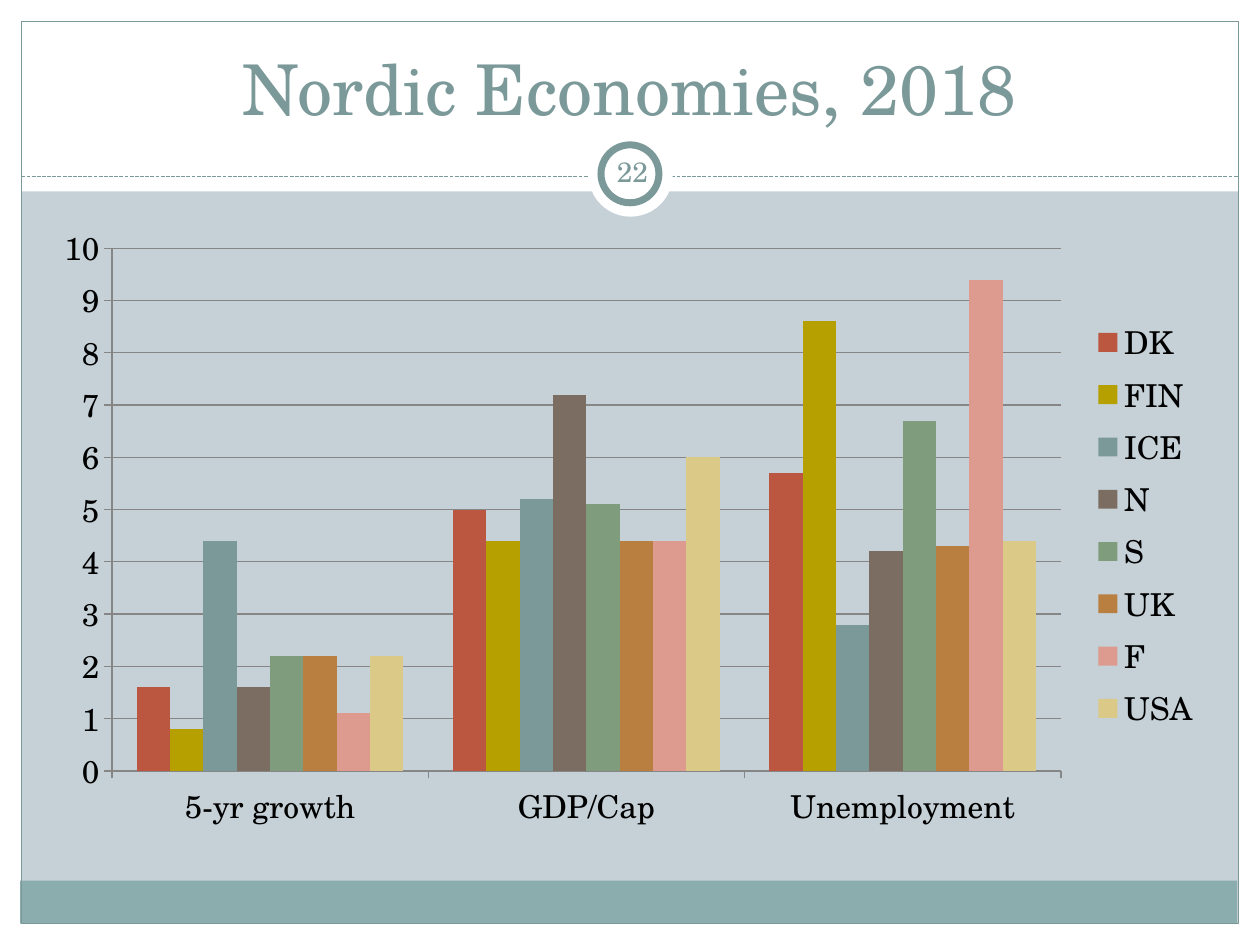
from dataclasses import dataclass

from lxml import etree
from pptx import Presentation
from pptx.chart.data import CategoryChartData
from pptx.dml.color import RGBColor
from pptx.enum.chart import XL_CHART_TYPE, XL_LEGEND_POSITION, XL_TICK_MARK
from pptx.enum.dml import MSO_LINE
from pptx.enum.shapes import MSO_CONNECTOR, MSO_SHAPE
from pptx.enum.text import MSO_ANCHOR, PP_ALIGN
from pptx.oxml.ns import qn
from pptx.util import Inches, Pt

RECT, OVAL = MSO_SHAPE.RECTANGLE, MSO_SHAPE.OVAL
CENTER = PP_ALIGN.CENTER
BOTTOM, MIDDLE = MSO_ANCHOR.BOTTOM, MSO_ANCHOR.MIDDLE
CLUSTERED = XL_CHART_TYPE.COLUMN_CLUSTERED


@dataclass(frozen=True)
class Theme:
    font: str = "TeX Gyre Schola"
    background: str = "C5D1D7"
    paper: str = "FFFFFF"
    accent: str = "7C999A"
    band: str = "8CADAE"
    text: str = "000000"
    grid: str = "868686"
    title_size: int = 40
    number_size: int = 16
    chart_size: int = 18


THEME = Theme()

CATEGORIES = ["5-yr growth", "GDP/Cap", "Unemployment"]
COUNTRIES = [
    ("DK", (1.6, 5, 5.7), "BB5740"),
    ("FIN", (0.8, 4.4, 8.6), "B5A000"),
    ("ICE", (4.4, 5.2, 2.8), "7C999A"),
    ("N", (1.6, 7.2, 4.2), "7C6D62"),
    ("S", (2.2, 5.1, 6.7), "7F9C7C"),
    ("UK", (2.2, 4.4, 4.3), "B97F40"),
    ("F", (1.1, 4.4, 9.4), "DD9B90"),
    ("USA", (2.2, 6, 4.4), "DBC988"),
]


def rgb(value):
    return RGBColor.from_string(value)


def box(*lengths):
    return [Inches(n) for n in lengths]


def style_line(line, color, width=0.75):
    line.color.rgb = rgb(color)
    line.width = Pt(width)


def style_font(font, size, color):
    font.name = THEME.font
    font.size = Pt(size)
    font.color.rgb = rgb(color)


def add_block(slide, kind, at, fill=None, line=None, width=0.75):
    sp = slide.shapes.add_shape(kind, *box(*at))
    sp.shadow.inherit = False
    if fill:
        sp.fill.solid()
        sp.fill.fore_color.rgb = rgb(fill)
    else:
        sp.fill.background()
    if line:
        style_line(sp.line, line, width)
    else:
        sp.line.fill.background()


def add_dashed_rule(slide, left, right, y):
    rule = slide.shapes.add_connector(MSO_CONNECTOR.STRAIGHT, *box(left, y, right, y))
    style_line(rule.line, THEME.accent)
    rule.line.dash_style = MSO_LINE.SQUARE_DOT
    etree.SubElement(rule._element.spPr, qn("a:effectLst"))


def write_text(sp, text, size, anchor):
    tf = sp.text_frame
    tf.word_wrap = True
    tf.vertical_anchor = anchor
    p = tf.paragraphs[0]
    p.alignment = CENTER
    r = p.add_run()
    r.text = text
    style_font(r.font, size, THEME.accent)


def add_frame(slide):
    # White margins around the content area
    for at in ((0, 7.33, 10, 0.17), (0, 0, 10, 1.52),
               (0, 0, 0.17, 7.5), (9.83, 0, 0.17, 7.5)):
        add_block(slide, RECT, at, THEME.paper)
    # Footer band, outline and header rule
    add_block(slide, RECT, (0.16, 6.99, 9.66, 0.34), THEME.band)
    add_block(slide, RECT, (0.17, 0.17, 9.66, 7.16), line=THEME.accent)
    add_dashed_rule(slide, 0.17, 9.83, 1.4)
    # Page number badge
    add_block(slide, OVAL, (4.67, 1.05, 0.67, 0.67), THEME.paper)
    add_block(slide, OVAL, (4.77, 1.15, 0.46, 0.46), THEME.paper, THEME.accent, 4)


def add_title(slide, text):
    title = slide.shapes.title
    title.left, title.top, title.width, title.height = box(0.33, 0.25, 9.33, 0.83)
    write_text(title, text, THEME.title_size, BOTTOM)
    # Bring the title in front of the frame
    slide.shapes._spTree.append(title._element)


def add_page_number(slide, text):
    sp = slide.shapes.add_textbox(*box(4.77, 1.12, 0.5, 0.48))
    tf = sp.text_frame
    tf.margin_left = tf.margin_right = Inches(0.05)
    tf.margin_top = tf.margin_bottom = Inches(0.05)
    write_text(sp, text, THEME.number_size, MIDDLE)


def place_plot(chart, **fractions):
    plot_area = chart._chartSpace.chart.plotArea
    for old in plot_area.findall(qn("c:layout")):
        plot_area.remove(old)
    layout = etree.Element(qn("c:layout"))
    manual = etree.SubElement(layout, qn("c:manualLayout"))
    settings = {"layoutTarget": "inner", "xMode": "edge", "yMode": "edge", **fractions}
    for tag, value in settings.items():
        etree.SubElement(manual, qn(f"c:{tag}")).set("val", str(value))
    plot_area.insert(0, layout)


def add_column_chart(slide):
    data = CategoryChartData()
    data.categories = CATEGORIES
    for name, values, _ in COUNTRIES:
        data.add_series(name, values)
    frame = slide.shapes.add_chart(CLUSTERED, *box(0.33, 1.67, 9.3, 5), data)
    chart = frame.chart
    chart.has_title = False
    style_font(chart.font, THEME.chart_size, THEME.text)
    chart.has_legend = True
    chart.legend.position = XL_LEGEND_POSITION.RIGHT
    chart.legend.include_in_layout = False

    # Columns
    plot = chart.plots[0]
    plot.vary_by_categories = False
    plot.gap_width = 150
    plot.overlap = 0
    for series, (_, _, color) in zip(plot.series, COUNTRIES):
        series.format.fill.solid()
        series.format.fill.fore_color.rgb = rgb(color)

    # Axes and grid
    for axis in (chart.category_axis, chart.value_axis):
        axis.major_tick_mark = XL_TICK_MARK.OUTSIDE
        style_line(axis.format.line, THEME.grid)
    values = chart.value_axis
    values.minimum_scale, values.maximum_scale, values.major_unit = 0, 10, 1
    values.has_major_gridlines = True
    style_line(values.major_gridlines.format.line, THEME.grid)
    place_plot(chart, x=0.06, y=0.06, w=0.81, h=0.83)


def main():
    prs = Presentation()
    prs.slide_width, prs.slide_height = box(10, 7.5)
    slide = prs.slides.add_slide(prs.slide_layouts[5])
    slide.background.fill.solid()
    slide.background.fill.fore_color.rgb = rgb(THEME.background)
    add_frame(slide)
    add_title(slide, "Nordic Economies, 2018")
    add_page_number(slide, "22")
    add_column_chart(slide)
    prs.save("out.pptx")


if __name__ == "__main__":
    main()
